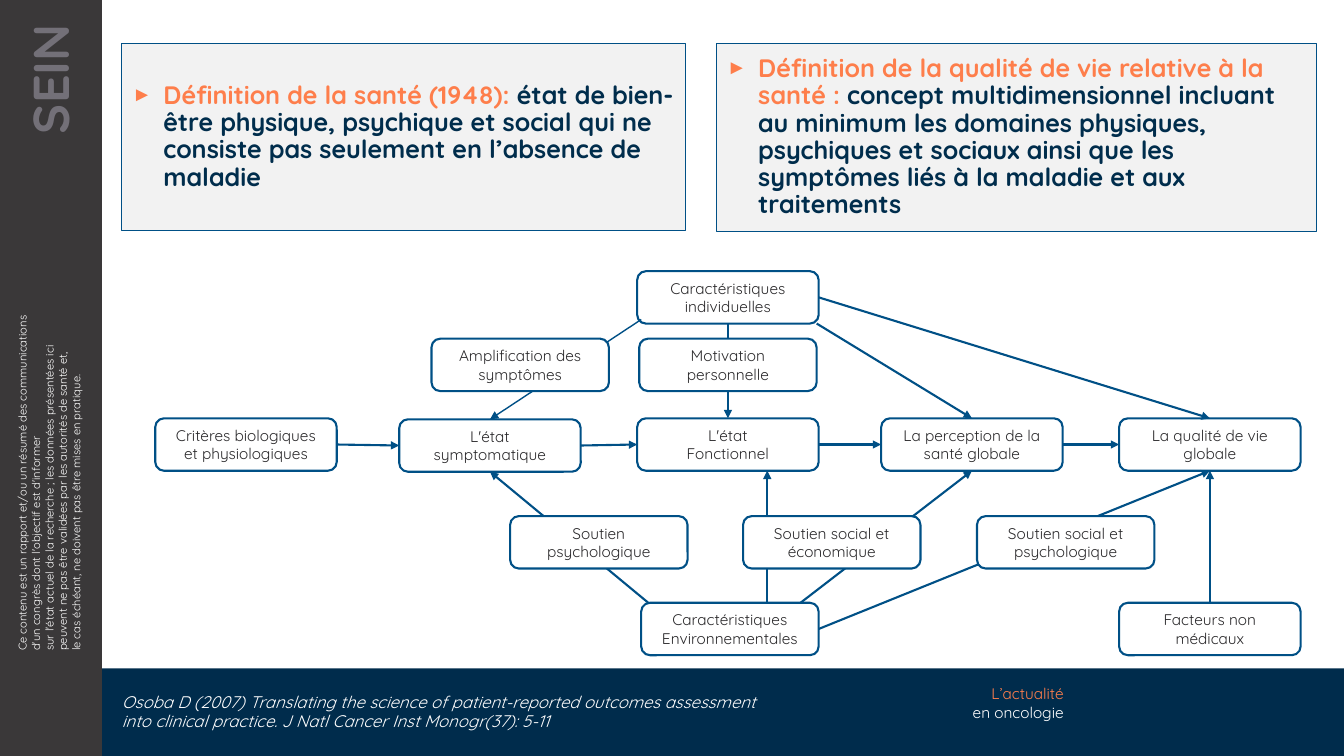
import pptx
import pptx.util
import pptx.dml.color
import pptx.enum.text
import pptx.enum.shapes
import pptx.oxml.ns
from lxml import etree

Inches = pptx.util.Inches
Pt = pptx.util.Pt
ALIGN = pptx.enum.text.PP_ALIGN
MIDDLE = pptx.enum.text.MSO_ANCHOR.MIDDLE
SHAPE = pptx.enum.shapes.MSO_SHAPE
qn = pptx.oxml.ns.qn

COLORS = {
    "navy": "002C4C", "dark": "3A3839", "blue": "005086", "pale": "F2F2F2",
    "white": "FFFFFF", "gray": "737078", "orange": "FF7F4D", "coral": "FE7E4B",
    "ink": "2B2A2C", "text": "002D4C",
}
RGB = {key: pptx.dml.color.RGBColor.from_string(code) for key, code in COLORS.items()}


def write(frame, *runs, size, align=None, bold=False, italic=False, space=None):
    """Fill a frame with (text, color) runs; a newline starts a new paragraph."""
    frame.word_wrap = True
    frame.auto_size = pptx.enum.text.MSO_AUTO_SIZE.NONE
    line = frame.paragraphs[0]
    for text, color in runs:
        for count, part in enumerate(text.split("\n")):
            if count:
                line = frame.add_paragraph()
            line.alignment = align
            line.line_spacing = space
            if part:
                run = line.add_run()
                run.text = part
                font = run.font
                font.name, font.size = "Quicksand", Pt(size)
                font.bold, font.italic = bold, italic
                font.color.rgb = RGB[color]


def add_node(text, left, top, width):
    node = slide.shapes.add_shape(SHAPE.ROUNDED_RECTANGLE, Inches(left), Inches(top),
                                  Inches(width), Inches(0.52))
    node.shadow.inherit = False
    node.fill.solid()
    node.fill.fore_color.rgb = RGB["white"]
    node.line.color.rgb = RGB["blue"]
    node.line.width = Pt(1.5)
    node.text_frame.vertical_anchor = MIDDLE
    write(node.text_frame, (text, "ink"), size=11, align=ALIGN.CENTER)
    return node


deck = pptx.Presentation()
deck.slide_width, deck.slide_height = Inches(13.33), Inches(7.5)
slide = deck.slides.add_slide(deck.slide_layouts[3])
title = slide.shapes.title.element
title.getparent().remove(title)

# Bottom and side bars
for left, top, width, height, color in [(1.01, 6.63, 12.32, 0.87, "navy"),
                                        (0, 0, 1.01, 7.5, "dark")]:
    bar = slide.shapes.add_shape(SHAPE.RECTANGLE, Inches(left), Inches(top),
                                 Inches(width), Inches(height))
    bar.shadow.inherit = False
    bar.fill.solid()
    bar.fill.fore_color.rgb = RGB[color]
    bar.line.fill.background()

# Texts on the bars
notice = ("Ce contenu est un rapport et/ou un résumé des communications d'un congrès "
          "dont l'objectif est d'informer\n"
          "sur l'état actuel de la recherche ; les données présentées ici peuvent ne pas "
          "être validées par les autorités de santé et,\n"
          "le cas échéant, ne doivent pas être mises en pratique.")
source = ("Osoba D (2007) Translating the science of patient-reported outcomes assessment "
          "into clinical practice. J Natl Cancer Inst Monogr(37): 5-11")
labels = [
    ((-1.31, 4.37, 3.6, 0.77), 270, 0.1, [(notice, "white")], dict(size=8)),
    ((-1.04, 1.18, 3.07, 0.71), 270, 0.24, [("SEIN", "gray")],
     dict(size=36, bold=True, align=ALIGN.RIGHT)),
    ((9.01, 6.74, 1.64, 0.47), 0, 0.1,
     [("L’actualité\n", "orange"), ("en oncologie", "white")],
     dict(size=11, align=ALIGN.RIGHT)),
    ((1.11, 6.84, 6.61, 0.27), 0, 0.1, [(source, "white")],
     dict(size=12, italic=True, space=0.9)),
]
for place, turn, inset, runs, style in labels:
    label = slide.shapes.add_textbox(*map(Inches, place))
    label.rotation = turn
    label.text_frame.margin_right = Inches(inset)
    write(label.text_frame, *runs, **style)

# Two definitions
terms = [
    (1, (1.21, 0.43, 5.59, 1.86), "Définition de la santé (1948): ",
     "état de bien-être physique, psychique et social qui ne consiste pas seulement en "
     "l’absence de maladie"),
    (2, (7.11, 0.43, 5.95, 1.87), "Définition de la qualité de vie relative à la santé : ",
     "concept multidimensionnel incluant au minimum les domaines physiques, psychiques et "
     "sociaux ainsi que les symptômes liés à la maladie et aux traitements"),
]
for index, place, head, body in terms:
    term = slide.placeholders[index]
    term.left, term.top, term.width, term.height = map(Inches, place)
    term.fill.solid()
    term.fill.fore_color.rgb = RGB["pale"]
    term.line.color.rgb = RGB["blue"]
    term.line.width = Pt(0.75)
    frame = term.text_frame
    frame.vertical_anchor = MIDDLE
    write(frame, (head, "coral"), (body, "text"), size=18, bold=True, space=0.9,
          align=ALIGN.LEFT)
    frame.paragraphs[0].space_before = Pt(0)
    props = frame.paragraphs[0]._p.get_or_add_pPr()
    props.set("marL", str(Inches(0.31)))
    props.set("indent", str(-Inches(0.31)))
    tint = etree.SubElement(props, qn("a:buClr"))
    etree.SubElement(tint, qn("a:srgbClr"), val=COLORS["coral"])
    etree.SubElement(props, qn("a:buSzPct"), val="80000")
    etree.SubElement(props, qn("a:buChar"), char="►")

# Main nodes of the model
nodes = {
    "person": add_node("Caractéristiques\nindividuelles", 6.32, 2.69, 1.8),
    "bio": add_node("Critères biologiques et physiologiques", 1.54, 4.15, 1.8),
    "symptom": add_node("L'état\nsymptomatique", 3.96, 4.16, 1.8),
    "function": add_node("L'état\nFonctionnel", 6.32, 4.15, 1.8),
    "health": add_node("La perception de la santé globale", 8.74, 4.15, 1.8),
    "life": add_node("La qualité de vie globale", 11.1, 4.15, 1.8),
    "place": add_node("Caractéristiques Environnementales", 6.36, 5.98, 1.76),
    "other": add_node("Facteurs non médicaux", 11.1, 5.98, 1.8),
}

# Each end is a node with its side, or a free point
TOP, LEFT, BOTTOM, RIGHT = range(4)
links = [
    (("place", RIGHT), ("life", BOTTOM), 1.5),
    ((7.94, 5.98), ("health", BOTTOM), 1.5),
    ((6.43, 5.98), ("symptom", BOTTOM), 1.5),
    ((7.61, 5.98), (7.61, 4.67), 1.5),
    ((6.36, 3.17), ("symptom", TOP), 1),
    (("person", BOTTOM), ("function", TOP), 1.5),
    ((8.1, 3.21), ("health", TOP), 1.5),
    (("person", RIGHT), ("life", TOP), 1.5),
    (("bio", RIGHT), ("symptom", LEFT), 1.5),
    (("symptom", RIGHT), ("function", LEFT), 1.5),
    (("function", RIGHT), ("health", LEFT), 1.5),
    (("health", RIGHT), ("life", LEFT), 1.5),
    (("other", TOP), ("life", BOTTOM), 1.5),
]
for start, end, weight in links:
    points = [(0, 0) if spot[0] in nodes else spot for spot in (start, end)]
    link = slide.shapes.add_connector(pptx.enum.shapes.MSO_CONNECTOR.STRAIGHT,
                                      *[Inches(n) for point in points for n in point])
    for spot, join in [(start, link.begin_connect), (end, link.end_connect)]:
        if spot[0] in nodes:
            join(nodes[spot[0]], spot[1])
    link.line.color.rgb = RGB["blue"]
    link.line.width = Pt(weight)
    props = link.element.spPr
    etree.SubElement(props.find(qn("a:ln")), qn("a:tailEnd"), type="triangle")
    etree.SubElement(props, qn("a:effectLst"))

# Factors that sit over the links
for text, left, top in [
    ("Amplification des symptômes", 4.28, 3.36),
    ("Motivation personnelle", 6.34, 3.36),
    ("Soutien\npsychologique", 5.06, 5.12),
    ("Soutien social et économique", 7.37, 5.12),
    ("Soutien social et psychologique", 9.69, 5.12),
]:
    add_node(text, left, top, 1.76)

deck.save("out.pptx")
